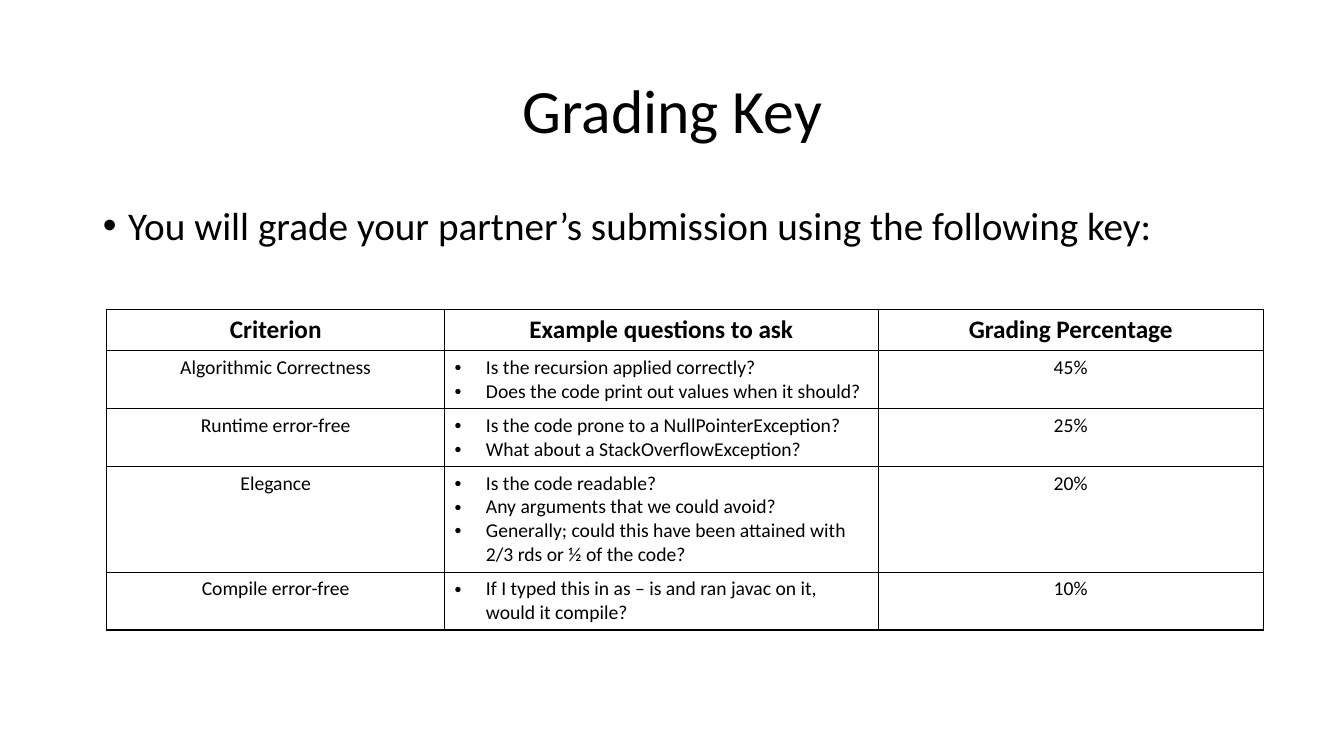
from lxml.etree import SubElement
from pptx import Presentation
from pptx.dml.color import RGBColor
from pptx.enum.text import MSO_ANCHOR, MSO_AUTO_SIZE, PP_ALIGN
from pptx.oxml.ns import qn
from pptx.util import Inches, Pt

BLACK = RGBColor(0, 0, 0)
FONT = "Calibri"
COL_WIDTHS = (3.35, 4.3, 3.82)
ROW_HEIGHTS = (0.41, 0.57, 0.57, 1.05, 0.57)
HEADINGS = ("Criterion", "Example questions to ask", "Grading Percentage")
CRITERIA = (
    ("Algorithmic Correctness",
     ("Is the recursion applied correctly?",
      "Does the code print out values when it should?"), "45%"),
    ("Runtime error-free",
     ("Is the code prone to a NullPointerException?",
      "What about a StackOverflowException?"), "25%"),
    ("Elegance",
     ("Is the code readable?",
      "Any arguments that we could avoid?",
      "Generally; could this have been attained with 2/3 rds or ½ of the code?"), "20%"),
    ("Compile error-free",
     ("If I typed this in as – is and ran javac on it, would it compile?",), "10%"),
)


def place(sp, left, top, width, height):
    sp.left, sp.top = Inches(left), Inches(top)
    sp.width, sp.height = Inches(width), Inches(height)


def add_text(p, text, size, bold=False, align=PP_ALIGN.LEFT):
    p.alignment = align
    r = p.add_run()
    r.text = text
    r.font.name, r.font.size, r.font.bold = FONT, Pt(size), bold
    r.font.color.rgb = BLACK


def add_bullet(p, indent):
    pPr = p._p.get_or_add_pPr()
    pPr.set("marL", str(Inches(indent)))
    pPr.set("indent", str(-Inches(indent)))
    SubElement(pPr, qn("a:buFont"), typeface="Arial")
    SubElement(pPr, qn("a:buChar"), char="•")


def outline_cell(cell):
    """Give the cell black borders and no fill."""
    tcPr = cell._tc.get_or_add_tcPr()
    for side in ("lnL", "lnR", "lnT", "lnB"):
        ln = SubElement(tcPr, qn(f"a:{side}"), w=str(Pt(1)))
        fill = SubElement(ln, qn("a:solidFill"))
        SubElement(fill, qn("a:srgbClr"), val=str(BLACK))
    cell.fill.background()


def fill_cell(cell, content, size=14, bold=False):
    """Write one centred text, or a tuple of texts as a bulleted list."""
    outline_cell(cell)
    tf = cell.text_frame
    if isinstance(content, str):
        add_text(tf.paragraphs[0], content, size, bold, PP_ALIGN.CENTER)
        return
    for i, text in enumerate(content):
        p = tf.add_paragraph() if i else tf.paragraphs[0]
        add_text(p, text, size, bold)
        add_bullet(p, 0.31)


def add_title(s, text):
    sp = s.shapes.title
    place(sp, 0.92, 0.4, 11.5, 1.45)
    tf = sp.text_frame
    tf.vertical_anchor = MSO_ANCHOR.MIDDLE
    tf.auto_size = MSO_AUTO_SIZE.NONE
    p = tf.paragraphs[0]
    p.line_spacing = 0.9
    add_text(p, text, 44, align=PP_ALIGN.CENTER)


def add_body(s, text):
    sp = s.placeholders[1]
    place(sp, 0.92, 2, 11.5, 4.76)
    tf = sp.text_frame
    tf.auto_size = MSO_AUTO_SIZE.NONE
    p = tf.paragraphs[0]
    p.line_spacing, p.space_before = 0.9, Pt(10)
    add_text(p, text, 28)
    add_bullet(p, 0.25)


def add_grading_table(s):
    rows = (HEADINGS,) + CRITERIA
    table = s.shapes.add_table(
        len(rows), len(HEADINGS), Inches(1.06), Inches(3.07),
        Inches(sum(COL_WIDTHS)), Inches(sum(ROW_HEIGHTS))).table
    table.horz_banding = False
    for col, width in zip(table.columns, COL_WIDTHS):
        col.width = Inches(width)
    for i, (row, height) in enumerate(zip(table.rows, ROW_HEIGHTS)):
        row.height = Inches(height)
        for cell, content in zip(row.cells, rows[i]):
            fill_cell(cell, content, 14 if i else 18, bold=i == 0)


def main():
    prs = Presentation()
    prs.slide_width, prs.slide_height = Inches(13.33), Inches(7.5)
    s = prs.slides.add_slide(prs.slide_layouts[1])
    add_title(s, "Grading Key")
    add_body(s, "You will grade your partner’s submission using the following key:")
    add_grading_table(s)
    prs.save("out.pptx")


if __name__ == "__main__":
    main()
